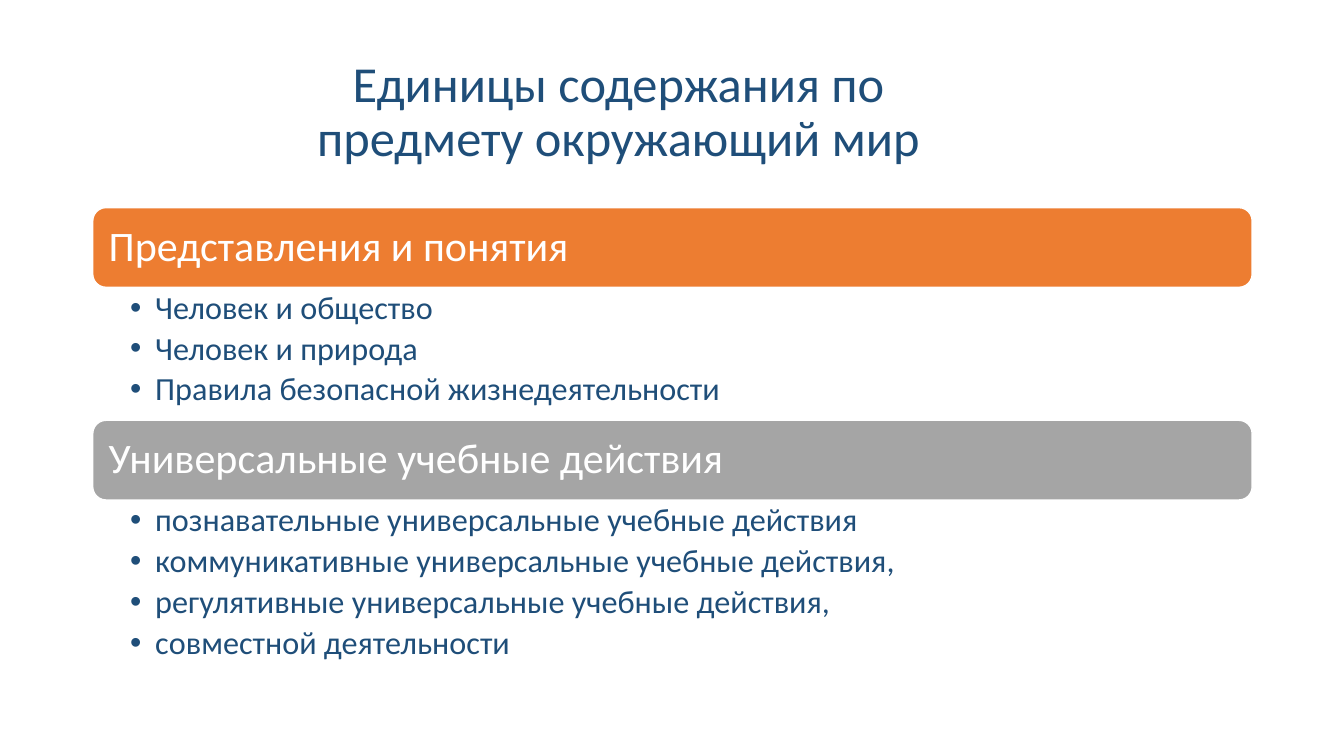
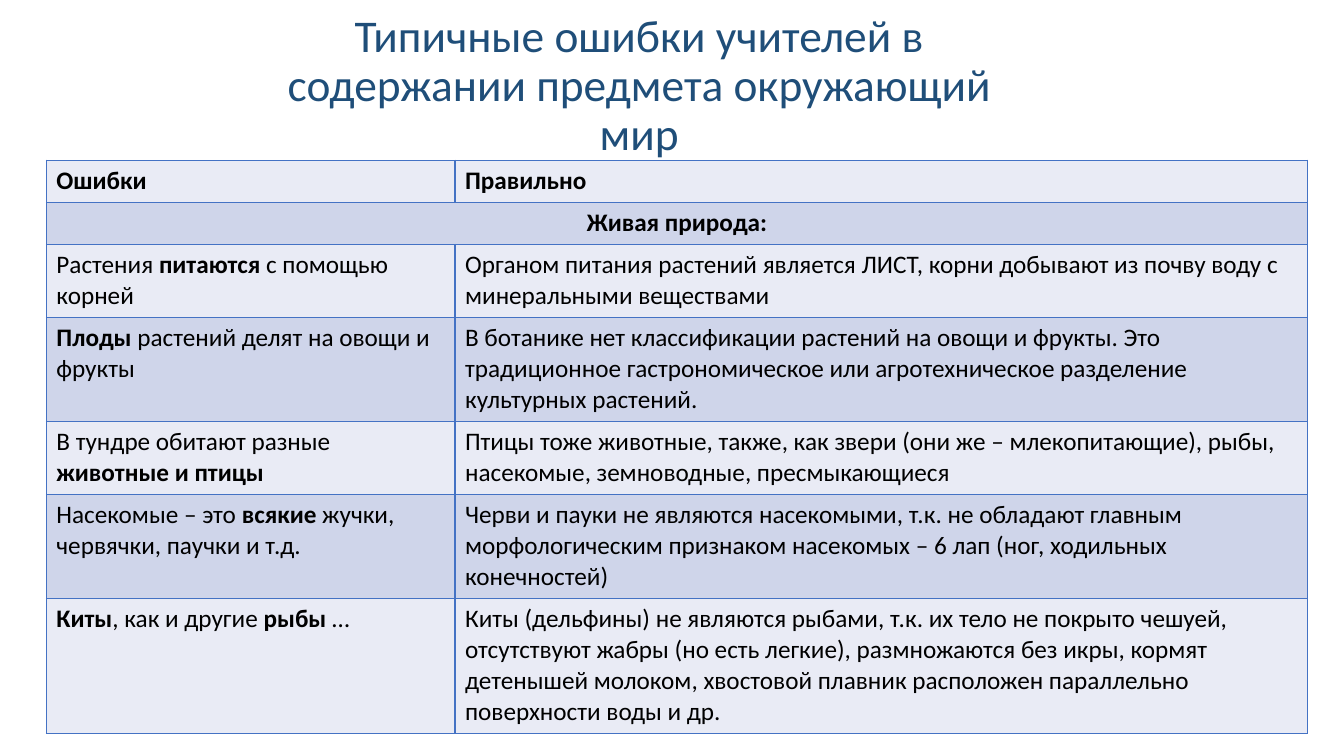
from collections import namedtuple

from lxml.etree import SubElement
from pptx import Presentation
from pptx.dml.color import RGBColor
from pptx.enum.shapes import MSO_SHAPE
from pptx.enum.text import MSO_ANCHOR, PP_ALIGN
from pptx.oxml.ns import qn
from pptx.util import Inches, Pt

WIDTH, HEIGHT = Inches(13.33), Inches(7.5)
FONT = "Calibri"
COLORS = {
    "heading": "1F4E79",
    "concepts": "ED7D31",
    "actions": "A5A5A5",
    "white": "FFFFFF",
    "black": "000000",
    "border": "4472C4",
    "light_row": "E9EBF5",
    "dark_row": "CFD5EA",
}
Box = namedtuple("Box", "left top width height")

SECTIONS = [
    ("Представления и понятия", "concepts", [
        "Человек и общество",
        "Человек и природа",
        "Правила безопасной жизнедеятельности",
    ]),
    ("Универсальные учебные действия", "actions", [
        "познавательные универсальные учебные действия",
        "коммуникативные универсальные учебные действия,",
        "регулятивные универсальные учебные действия,",
        "совместной деятельности",
    ]),
]

# Each row: number of text lines, then its cells; *...* marks bold text.
MISTAKES = [
    (1, "*Ошибки*", "*Правильно*"),
    (1, "*Живая природа:*"),
    (2, "Растения *питаются* с помощью корней",
     "Органом питания растений является ЛИСТ, корни добывают из почву воду "
     "с минеральными веществами"),
    (3, "*Плоды* растений делят на овощи и фрукты",
     "В ботанике нет классификации растений на овощи и фрукты. Это традиционное "
     "гастрономическое или агротехническое разделение культурных растений."),
    (2, "В тундре обитают разные *животные и птицы*",
     "Птицы тоже животные, также, как звери (они же – млекопитающие), рыбы, "
     "насекомые, земноводные, пресмыкающиеся"),
    (3, "Насекомые – это *всякие* жучки, червячки, паучки и т.д.",
     "Черви и пауки не являются насекомыми, т.к. не обладают главным "
     "морфологическим признаком насекомых – 6 лап (ног, ходильных конечностей)"),
    (4, "*Киты*, как и другие *рыбы* …",
     "Киты (дельфины) не являются рыбами, т.к. их тело не покрыто чешуей, "
     "отсутствуют жабры (но есть легкие), размножаются без икры, кормят детенышей "
     "молоком, хвостовой плавник расположен параллельно поверхности воды и др."),
]


def color(name):
    return RGBColor.from_string(COLORS[name])


def region(left, top, width, height):
    """Turn percentages of the slide's size into a box."""
    return Box(int(WIDTH * left / 100), int(HEIGHT * top / 100),
               int(WIDTH * width / 100), int(HEIGHT * height / 100))


def add_run(paragraph, text, size, color_name, bold=False):
    run = paragraph.add_run()
    run.text = text
    run.font.name = FONT
    run.font.size = Pt(size)
    run.font.bold = bold
    run.font.color.rgb = color(color_name)


def set_frame(frame, anchor, left, top, right, bottom):
    frame.word_wrap = True
    frame.vertical_anchor = anchor
    frame.margin_left, frame.margin_top = Inches(left), Inches(top)
    frame.margin_right, frame.margin_bottom = Inches(right), Inches(bottom)


def add_bullet(paragraph):
    properties = paragraph._p.get_or_add_pPr()
    properties.set("marL", str(Inches(0.25)))
    properties.set("indent", str(-Inches(0.25)))
    SubElement(properties, qn("a:buFont")).set("typeface", "Arial")
    SubElement(properties, qn("a:buChar")).set("char", "•")


def add_title(slide, box, text, size):
    frame = slide.shapes.add_textbox(*box).text_frame
    set_frame(frame, MSO_ANCHOR.MIDDLE, 0.1, 0.05, 0.1, 0.05)
    paragraph = frame.paragraphs[0]
    paragraph.alignment = PP_ALIGN.CENTER
    paragraph.line_spacing = 0.9
    add_run(paragraph, text, size, "heading")


def add_bar(slide, box, text, fill_name):
    bar = slide.shapes.add_shape(MSO_SHAPE.ROUNDED_RECTANGLE, *box)
    bar.shadow.inherit = False
    bar.fill.solid()
    bar.fill.fore_color.rgb = color(fill_name)
    bar.line.color.rgb = color("white")
    bar.line.width = Pt(1)
    set_frame(bar.text_frame, MSO_ANCHOR.MIDDLE, 0.12, 0.08, 0.12, 0.08)
    paragraph = bar.text_frame.paragraphs[0]
    paragraph.alignment = PP_ALIGN.LEFT
    paragraph.line_spacing = 0.9
    add_run(paragraph, text, 30, "white")


def add_list(slide, box, items):
    frame = slide.shapes.add_textbox(*box).text_frame
    set_frame(frame, MSO_ANCHOR.TOP, 0.37, 0.04, 0.23, 0.04)
    for index, item in enumerate(items):
        paragraph = frame.add_paragraph() if index else frame.paragraphs[0]
        add_bullet(paragraph)
        paragraph.line_spacing = 0.9
        paragraph.space_after = Pt(4.3)
        add_run(paragraph, item, 23, "heading")


def add_sections(slide, box, sections):
    """Stack bars and lists; heights are counted in list lines."""
    bar_lines, padding = 1.93, 0.22
    total = sum(bar_lines + len(items) + padding for _, _, items in sections)
    line = box.height / total
    top = box.top
    for heading, fill_name, items in sections:
        bar_height = int(line * bar_lines)
        list_height = int(line * (len(items) + padding))
        add_bar(slide, box._replace(top=top, height=bar_height), heading, fill_name)
        top += bar_height
        add_list(slide, box._replace(top=top, height=list_height), items)
        top += list_height


def style_cell(cell, fill_name):
    properties = cell._tc.get_or_add_tcPr()
    for side in ("a:lnL", "a:lnR", "a:lnT", "a:lnB"):
        line = SubElement(properties, qn(side))
        line.set("w", str(Pt(1)))
        fill = SubElement(line, qn("a:solidFill"))
        SubElement(fill, qn("a:srgbClr")).set("val", COLORS["border"])
    cell.fill.solid()
    cell.fill.fore_color.rgb = color(fill_name)


def add_mistakes_table(slide, box, rows):
    table = slide.shapes.add_table(len(rows), 2, *box).table
    table.first_row = table.horz_banding = False
    table.columns[0].width = int(box.width * 0.324)
    table.columns[1].width = box.width - table.columns[0].width
    padding = 0.36
    line = box.height / sum(lines + padding for lines, *_ in rows)
    for index, (lines, *texts) in enumerate(rows):
        table.rows[index].height = int(line * (lines + padding))
        spans_row = len(texts) == 1
        if spans_row:
            table.cell(index, 0).merge(table.cell(index, 1))
        for column, text in enumerate(texts):
            cell = table.cell(index, column)
            style_cell(cell, "dark_row" if index % 2 else "light_row")
            paragraph = cell.text_frame.paragraphs[0]
            if spans_row:
                paragraph.alignment = PP_ALIGN.CENTER
            for part, fragment in enumerate(text.split("*")):
                if fragment:
                    add_run(paragraph, fragment, 18, "black", bold=part % 2 == 1)


def build_content_units(slide):
    add_title(slide, region(18.45, 5.33, 55.14, 19.33),
              "Единицы содержания по предмету окружающий мир", 36)
    add_sections(slide, region(6.9, 27.47, 86.27, 61.73), SECTIONS)


def build_typical_mistakes(slide):
    add_title(slide, region(18.68, 1.87, 57.76, 19.33),
              "Типичные ошибки учителей в содержании предмета окружающий мир", 32.4)
    add_mistakes_table(slide, region(3.45, 21.2, 93.85, 75.87), MISTAKES)


def main():
    presentation = Presentation()
    presentation.slide_width, presentation.slide_height = WIDTH, HEIGHT
    blank_layout = presentation.slide_layouts[6]
    for build in (build_content_units, build_typical_mistakes):
        build(presentation.slides.add_slide(blank_layout))
    presentation.save("out.pptx")


if __name__ == "__main__":
    main()
